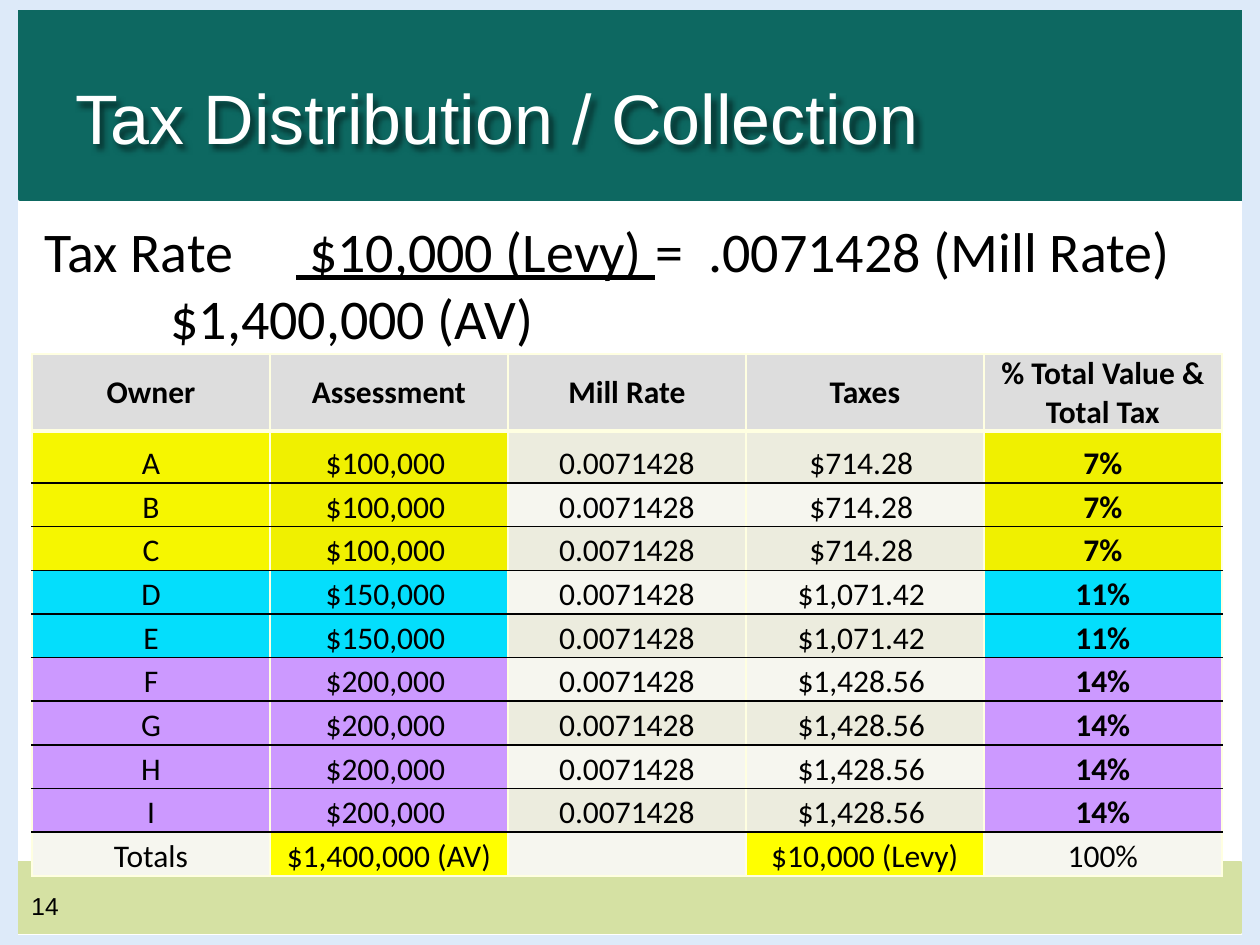
from lxml.etree import SubElement
from pptx import Presentation
from pptx.dml.color import RGBColor
from pptx.enum.shapes import MSO_SHAPE as SHAPE
from pptx.enum.text import MSO_ANCHOR as ANCHOR, PP_ALIGN as ALIGN
from pptx.oxml import parse_xml
from pptx.oxml.ns import nsdecls, qn
from pptx.util import Emu, Pt

PX_PER_INCH = 126
HEAD_FONT, BODY_FONT = "Arial", "Calibri"
BLACK = RGBColor(0x00, 0x00, 0x00)
WHITE = RGBColor(0xFF, 0xFF, 0xFF)
TEAL = RGBColor(0x0D, 0x68, 0x61)
OLIVE = RGBColor(0xD5, 0xE1, 0xA3)
PALE_BLUE = RGBColor(0xDD, 0xEA, 0xF9)
GREY = RGBColor(0xDD, 0xDD, 0xDD)
IVORY = RGBColor(0xFF, 0xFF, 0xE1)
BAND_DARK = RGBColor(0xEC, 0xEC, 0xDE)
BAND_LIGHT = RGBColor(0xF6, 0xF6, 0xEF)
OWNER_YELLOW = RGBColor(0xF6, 0xF6, 0x00)
VALUE_YELLOW = RGBColor(0xF0, 0xF0, 0x00)
TOTAL_YELLOW = RGBColor(0xFF, 0xFF, 0x00)
CYAN = RGBColor(0x04, 0xDE, 0xFC)
PURPLE = RGBColor(0xCC, 0x99, 0xFF)

MILL_RATE = 0.0071428
HEADERS = ["Owner", "Assessment", "Mill Rate", "Taxes", "% Total Value & Total Tax"]
# owners, assessment of each, owner fill, value fill
GROUPS = [
    ("ABC", 100000, OWNER_YELLOW, VALUE_YELLOW),
    ("DE", 150000, CYAN, CYAN),
    ("FGHI", 200000, PURPLE, PURPLE),
]


def px(n):
    return Emu(round(n * 914400 / PX_PER_INCH))


def style(run, size, font, color=BLACK, bold=False):
    f = run.font
    f.size, f.name, f.bold = Pt(size), font, bold
    f.color.rgb = color


class Deck:
    def __init__(self):
        self.prs = Presentation()
        self.prs.slide_width, self.prs.slide_height = px(1260), px(945)
        self.s = self.prs.slides.add_slide(self.prs.slide_layouts[6])

    def band(self, x, y, w, h, color):
        sp = self.s.shapes.add_shape(SHAPE.RECTANGLE, px(x), px(y), px(w), px(h))
        sp.shadow.inherit = False
        sp.fill.solid()
        sp.fill.fore_color.rgb = color
        sp.line.color.rgb = color
        sp.line.width = Pt(2)

    def text(self, x, y, w, h, paragraphs, size, font, color=BLACK, anchor=ANCHOR.TOP):
        """Each paragraph is a list of run texts."""
        sp = self.s.shapes.add_textbox(px(x), px(y), px(w), px(h))
        tf = sp.text_frame
        tf.word_wrap = True
        tf.vertical_anchor = anchor
        for i, texts in enumerate(paragraphs):
            p = tf.add_paragraph() if i else tf.paragraphs[0]
            for text in texts:
                r = p.add_run()
                r.text = text
                style(r, size, font, color)
        return sp

    def drop_shadow(self, sp):
        sp.element.spPr.append(parse_xml(
            f'<a:effectLst {nsdecls("a")}><a:outerShdw blurRad="38100" dist="38100" '
            'dir="2700000"><a:srgbClr val="000000"><a:alpha val="50000"/></a:srgbClr>'
            '</a:outerShdw></a:effectLst>'))

    def borders(self, cell, top, bottom):
        """Draw all four sides; top and bottom are (colour, points)."""
        tc_pr = cell._tc.get_or_add_tcPr()
        side = (IVORY, 1)
        for tag, (color, width) in zip(("lnL", "lnR", "lnT", "lnB"), (side, side, top, bottom)):
            ln = SubElement(tc_pr, qn(f"a:{tag}"), w=str(Pt(width)))
            SubElement(SubElement(ln, qn("a:solidFill")), qn("a:srgbClr"), val=str(color))

    def cell(self, cell, text, fill, top, bottom, bold=False, anchor=ANCHOR.BOTTOM):
        self.borders(cell, top, bottom)
        cell.fill.solid()
        cell.fill.fore_color.rgb = fill
        cell.margin_left = cell.margin_right = cell.margin_top = px(1)
        cell.margin_bottom = 0
        cell.vertical_anchor = anchor
        cell.text = text
        p = cell.text_frame.paragraphs[0]
        p.alignment = ALIGN.CENTER
        for r in p.runs:
            style(r, 18, BODY_FONT, bold=bold)

    def table(self, x, y, w, heights, rows):
        """Each row is a list of (text, fill, bold)."""
        n_cols = len(rows[0])
        frame = self.s.shapes.add_table(len(rows), n_cols, px(x), px(y), px(w), px(sum(heights)))
        table = frame.table
        table.horz_banding = False
        for col in table.columns:
            col.width = px(w / n_cols)
        for row, height in zip(table.rows, heights):
            row.height = px(height)
        edges = [(IVORY, 1), (IVORY, 3)] + [(BLACK, 1)] * (len(rows) - 2) + [(IVORY, 1)]
        for i, row in enumerate(rows):
            anchor = ANCHOR.BOTTOM if i else ANCHOR.MIDDLE
            for j, (text, fill, bold) in enumerate(row):
                self.cell(table.cell(i, j), text, fill, edges[i], edges[i + 1], bold, anchor)


def tax_rows():
    total = sum(len(owners) * value for owners, value, *_ in GROUPS)
    rows = [[(h, GREY, True) for h in HEADERS]]
    for owners, value, owner_fill, value_fill in GROUPS:
        for owner in owners:
            band = BAND_DARK if len(rows) % 2 else BAND_LIGHT
            rows.append([
                (owner, owner_fill, False),
                (f"${value:,} ", value_fill, False),
                (str(MILL_RATE), band, False),
                (f"${value * MILL_RATE:,.2f} ", band, False),
                (f"{value / total:.0%}", value_fill, True),
            ])
    rows.append([
        ("Totals", BAND_LIGHT, False),
        (f"${total:,} (AV)", TOTAL_YELLOW, False),
        ("", BAND_LIGHT, False),
        ("$10,000 (Levy)", TOTAL_YELLOW, False),
        ("100%", BAND_LIGHT, False),
    ])
    return rows


def main():
    deck = Deck()
    deck.band(15, 863, 1226, 69, OLIVE)
    deck.band(20, 10, 1222, 189, TEAL)
    for frame_side in ((0, 0, 1260, 8), (1, 7, 15, 934), (1244, 7, 15, 934), (0, 937, 1260, 8)):
        deck.band(*frame_side, PALE_BLUE)
    deck.text(19, 885, 294, 50, [["14"]], 14, HEAD_FONT)

    title = deck.text(63, 38, 935, 158, [["Tax Distribution / Collection"]], 40, HEAD_FONT,
                      WHITE, ANCHOR.MIDDLE)
    deck.drop_shadow(title)

    formula = deck.text(32, 210, 1207, 149, [
        ["Tax Rate\t", " $10,000 (Levy) ", "=  .0071428 (Mill Rate)"],
        [" \t\t$1,400,000 (AV)"],
    ], 32, BODY_FONT)
    formula.text_frame.paragraphs[0].runs[1].font.underline = True

    rows = tax_rows()
    small_rows = len(rows) - 2
    deck.table(32, 354, 1190, [77, 52] + [393 / small_rows] * small_rows, rows)
    deck.prs.save("out.pptx")


if __name__ == "__main__":
    main()
